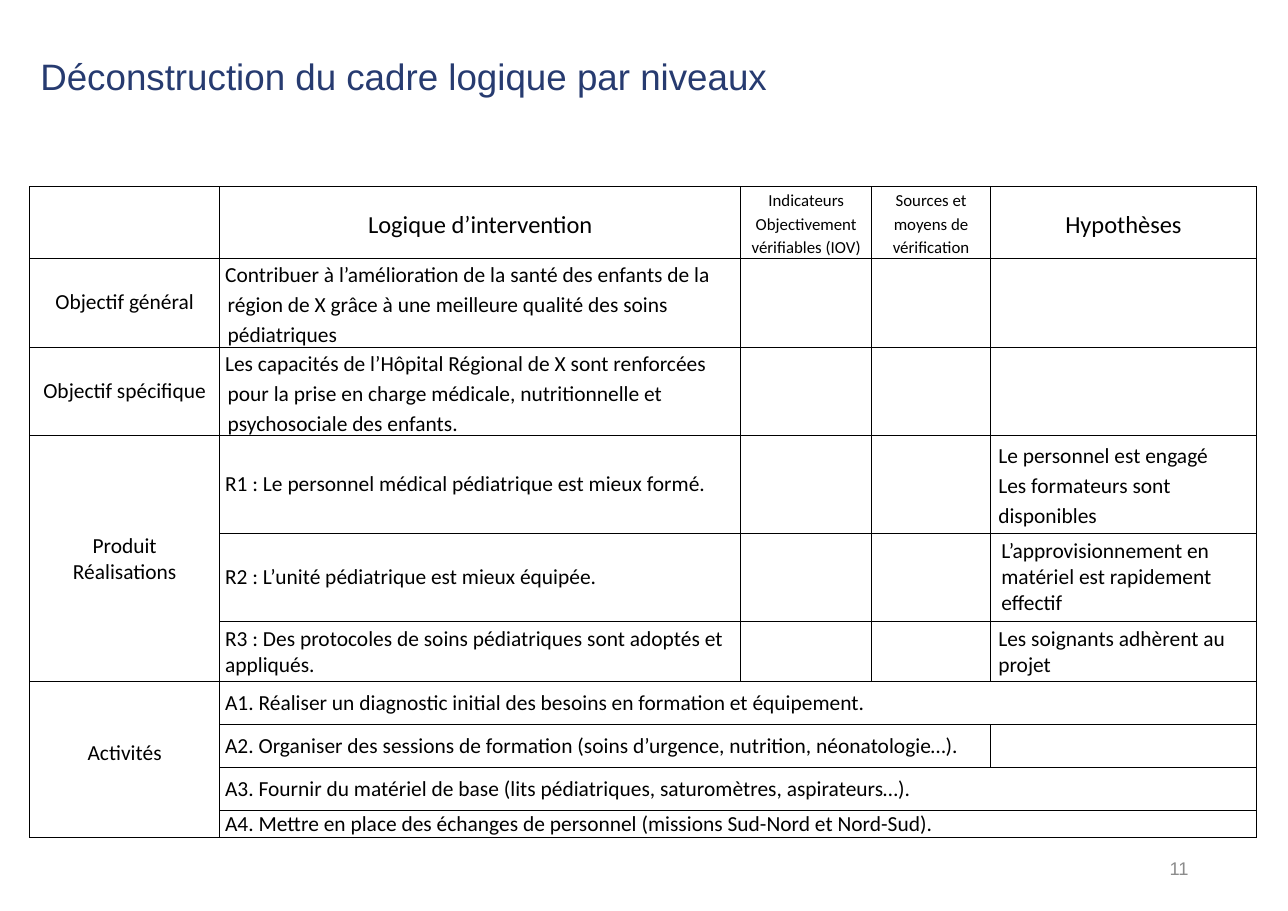
import dataclasses

import pptx
import pptx.dml.color
import pptx.enum.text
import pptx.oxml
import pptx.util

Cm = pptx.util.Cm
Pt = pptx.util.Pt
ALIGN = pptx.enum.text.PP_ALIGN
MIDDLE = pptx.enum.text.MSO_ANCHOR.MIDDLE


@dataclasses.dataclass(frozen=True)
class Theme:
    """Colours, fonts and type sizes of the slide."""
    navy: str = "273B70"
    grey: str = "8C8C8C"
    ink: str = "000000"
    heading_font: str = "Arial"
    table_font: str = "Calibri"
    title: int = 24
    heading: int = 16
    body: int = 14
    number: int = 12
    small: int = 11
    rule: float = 0.75


THEME = Theme()
COLUMNS = [4.39, 12.01, 3.02, 2.74, 6.13]
ROWS = [1.64, 2.05, 2.05, 2.24, 2.05, 1.38, 0.99, 0.99, 0.99, 0.62]

CENTRED = {"alignment": ALIGN.CENTER}
LOOSE = {"line_spacing": 1.15}
HEADER = CENTRED | LOOSE
INSET = {"margin_left": Cm(0.18), "margin_right": Cm(0.18)}
WIDE_INSET = {"margin_left": Cm(0.25), "margin_right": Cm(0.25)}
RAISED = {"margin_bottom": Cm(0.3)}

ENTRIES = [
    (0, 1, "Logique d’intervention", THEME.heading, HEADER, {}),
    (0, 2, "Indicateurs Objectivement vérifiables (IOV)", THEME.small, HEADER, {}),
    (0, 3, "Sources et moyens de vérification", THEME.small, HEADER, {}),
    (0, 4, "Hypothèses", THEME.heading, HEADER, {}),
    (1, 0, "Objectif général", THEME.body, CENTRED, {}),
    (1, 1, "Contribuer à l’amélioration de la santé des enfants de la région de X "
           "grâce à une meilleure qualité des soins pédiatriques", THEME.body, LOOSE, {}),
    (2, 0, "Objectif spécifique", THEME.body, CENTRED, {}),
    (2, 1, "Les capacités de l’Hôpital Régional de X sont renforcées pour la prise en charge "
           "médicale, nutritionnelle et psychosociale des enfants.", THEME.body, LOOSE, {}),
    (3, 0, "Produit\nRéalisations", THEME.body, CENTRED, {}),
    (3, 1, "R1 : Le personnel médical pédiatrique est mieux formé.", THEME.body, {}, {}),
    (3, 4, "Le personnel est engagé\nLes formateurs sont disponibles", THEME.body, LOOSE, INSET),
    (4, 1, "R2 : L’unité pédiatrique est mieux équipée.", THEME.body, {}, {}),
    (4, 4, "L’approvisionnement en matériel est rapidement effectif", THEME.body, {}, WIDE_INSET),
    (5, 1, "R3 : Des protocoles de soins pédiatriques sont adoptés et appliqués.",
     THEME.body, {}, {}),
    (5, 4, "Les soignants adhèrent au projet", THEME.body, {}, INSET),
    (6, 0, "Activités", THEME.body, CENTRED, RAISED),
    (6, 1, "A1. Réaliser un diagnostic initial des besoins en formation et équipement.",
     THEME.body, {}, {}),
    (7, 1, "A2. Organiser des sessions de formation (soins d’urgence, nutrition, néonatologie…).",
     THEME.body, {}, {}),
    (8, 1, "A3. Fournir du matériel de base (lits pédiatriques, saturomètres, aspirateurs…).",
     THEME.body, {}, {}),
    (9, 1, "A4. Mettre en place des échanges de personnel (missions Sud-Nord et Nord-Sud).",
     THEME.body, {}, {}),
]
SPANS = [((3, 0), (5, 0)), ((6, 0), (9, 0)), ((6, 1), (6, 4)),
         ((7, 1), (7, 3)), ((8, 1), (8, 4)), ((9, 1), (9, 4))]


def apply(target, formats):
    """Set each named attribute of the target."""
    for name, value in formats.items():
        setattr(target, name, value)


def style_text(frame, font, size, colour, formats):
    """Format all paragraphs and runs of a text frame."""
    for paragraph in frame.paragraphs:
        apply(paragraph, formats)
        for run in paragraph.runs:
            apply(run.font, {"name": font, "size": Pt(size)})
            run.font.color.rgb = pptx.dml.color.RGBColor.from_string(colour)


def add_line_of_text(slide, box, text, size, colour, formats):
    """Place one line of text, centred vertically in its box."""
    frame = slide.shapes.add_textbox(*map(Cm, box)).text_frame
    apply(frame, {"word_wrap": True, "vertical_anchor": MIDDLE, "text": text})
    style_text(frame, THEME.heading_font, size, colour, formats)


def rule_cell(cell):
    """Draw the four borders of a cell and leave it unfilled."""
    properties = cell._tc.get_or_add_tcPr()
    for side in "LRTB":
        properties.append(pptx.oxml.parse_xml(
            f'<a:ln{side} xmlns:a="http://schemas.openxmlformats.org/drawingml/2006/main" '
            f'w="{Pt(THEME.rule)}"><a:solidFill><a:srgbClr val="{THEME.ink}"/></a:solidFill>'
            f'</a:ln{side}>'))
    cell.fill.background()


def add_logical_framework(slide, box):
    """Build the logical framework table in its box."""
    framework = slide.shapes.add_table(len(ROWS), len(COLUMNS), *map(Cm, box)).table
    apply(framework, {"first_row": False, "horz_banding": False})
    for column, width in zip(framework.columns, COLUMNS):
        column.width = Cm(width)
    for row, height in zip(framework.rows, ROWS):
        row.height = Cm(height)
    for cell in framework.iter_cells():
        apply(cell, {"margin_left": Cm(0.12), "margin_right": Cm(0.12), "margin_top": 0,
                     "margin_bottom": 0, "vertical_anchor": MIDDLE})
        rule_cell(cell)
    for first, last in SPANS:
        framework.cell(*first).merge(framework.cell(*last))
    for row, column, text, size, formats, margins in ENTRIES:
        cell = framework.cell(row, column)
        apply(cell, {"text": text} | margins)
        style_text(cell.text_frame, THEME.table_font, size, THEME.ink, formats)
        if formats is LOOSE and column == 1:
            properties = cell.text_frame.paragraphs[0]._p.get_or_add_pPr()
            properties.set("marL", str(Cm(0.06)))
            properties.set("indent", str(Cm(-0.07)))


def main():
    """Build and save the presentation."""
    deck = pptx.Presentation()
    apply(deck, {"slide_width": Cm(29.7), "slide_height": Cm(21)})
    slide = deck.slides.add_slide(deck.slide_layouts[6])
    add_line_of_text(slide, (0.68, 0.93, 18.1, 1.75),
                     "Déconstruction du cadre logique par niveaux",
                     THEME.title, THEME.navy, {"line_spacing": 0.9})
    add_line_of_text(slide, (20.98, 19.46, 6.68, 1.12), "11",
                     THEME.number, THEME.grey, {"alignment": ALIGN.RIGHT})
    add_logical_framework(slide, (0.68, 4.31, sum(COLUMNS), sum(ROWS)))
    deck.save("out.pptx")


if __name__ == "__main__":
    main()
